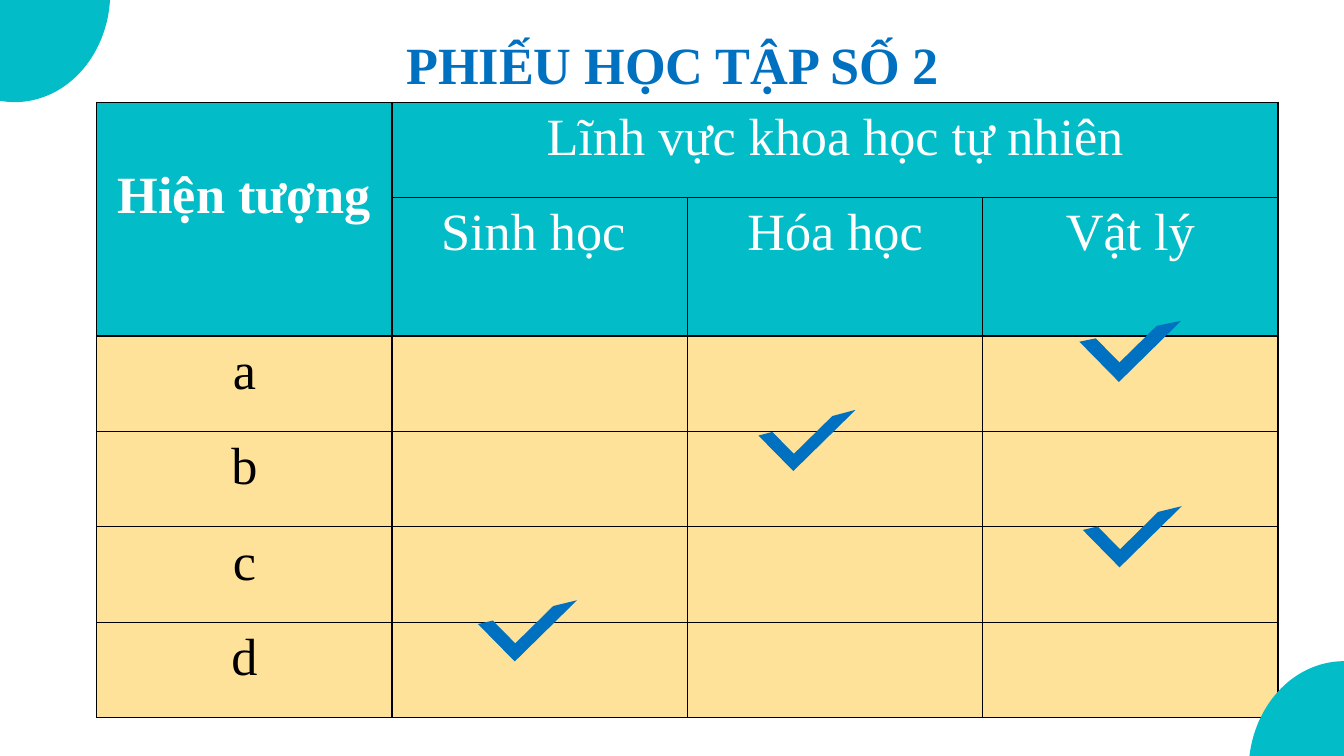
from pptx import Presentation
from pptx.dml.color import RGBColor
from pptx.enum.shapes import MSO_SHAPE as SHAPE
from pptx.enum.text import MSO_ANCHOR, PP_ALIGN
from pptx.oxml import parse_xml
from pptx.oxml.ns import nsdecls
from pptx.util import Inches, Pt

# Content
TITLE = "PHIẾU HỌC TẬP SỐ 2"
ROWS = [
    ["Hiện tượng", "Lĩnh vực khoa học tự nhiên", "", ""],
    ["", "Sinh học ", "Hóa học", "Vật lý"],
    ["a", "", "", ""],
    ["b", "", "", ""],
    ["c", "", "", ""],
    ["d", "", "", ""],
]
HEADER_ROWS = 2
ROW_HEIGHTS = [0.71, 1.03, 0.71, 0.71, 0.71, 0.71]
TICKS = [  # left, top, width
    (8.2, 2.14, 0.42),
    (8.23, 3.53, 0.39),
    (5.82, 2.82, 0.37),
    (3.73, 4.23, 0.39),
]
CORNERS = [(-0.6, -0.87), (9.29, 4.92)]
FONT, SIZE = "Times New Roman", 28
BLUE, TEAL, CREAM = "0070C0", "02BDC7", "FFE299"
WHITE, BLACK = "FFFFFF", "000000"


def rgb(hex_color):
    return RGBColor.from_string(hex_color)


def style(p, color, bold=False):
    p.alignment = PP_ALIGN.CENTER
    p.font.name, p.font.size, p.font.bold = FONT, Pt(SIZE), bold
    p.font.color.rgb = rgb(color)


def add_plain(s, kind, x, y, w, h, color):
    sp = s.shapes.add_shape(kind, Inches(x), Inches(y), Inches(w), Inches(h))
    sp.shadow.inherit = False
    sp.fill.solid()
    sp.fill.fore_color.rgb = rgb(color)
    sp.line.fill.background()
    return sp


def set_borders(cell, color, width):
    tc_pr = cell._tc.get_or_add_tcPr()
    for i, side in enumerate(("lnL", "lnR", "lnT", "lnB")):
        tc_pr.insert(i, parse_xml(
            f'<a:{side} {nsdecls("a")} w="{Pt(width)}"><a:solidFill>'
            f'<a:srgbClr val="{color}"/></a:solidFill></a:{side}>'))


# Widescreen 16:9 slide
prs = Presentation()
prs.slide_width = Inches(10)
prs.slide_height = prs.slide_width * 9 // 16
s = prs.slides.add_slide(prs.slide_layouts[5])

# Title
title = s.shapes.title
title.left, title.top = Inches(1.6), Inches(0.19)
title.width, title.height = Inches(6.81), Inches(0.57)
title.text_frame.text = TITLE
style(title.text_frame.paragraphs[0], BLUE, bold=True)

# Table
table = s.shapes.add_table(len(ROWS), len(ROWS[0]), Inches(0.72), Inches(0.76),
                           Inches(8.79), Inches(sum(ROW_HEIGHTS))).table
for row, height in zip(table.rows, ROW_HEIGHTS):
    row.height = Inches(height)
for r, texts in enumerate(ROWS):
    header = r < HEADER_ROWS
    for c, text in enumerate(texts):
        cell = table.cell(r, c)
        cell.fill.solid()
        cell.fill.fore_color.rgb = rgb(TEAL if header else CREAM)
        set_borders(cell, BLACK, 0.75)
        cell.vertical_anchor = MSO_ANCHOR.TOP
        if text:
            cell.text = text
            style(cell.text_frame.paragraphs[0], WHITE if header else BLACK,
                  bold=(r, c) == (0, 0))
table.cell(0, 0).merge(table.cell(1, 0))
table.cell(0, 1).merge(table.cell(0, 3))
table.cell(0, 0).margin_top = Inches(0.48)

# Tick marks: half frames turned upside down
for x, y, w in TICKS:
    tick = add_plain(s, SHAPE.HALF_FRAME, x, y, w, 0.65, BLUE)
    tick.rotation = 225.5
    tick.adjustments[0], tick.adjustments[1] = 0.25, 0.24

# Corner circles
for x, y in CORNERS:
    add_plain(s, SHAPE.OVAL, x, y, 1.42, 1.63, TEAL)

prs.save("out.pptx")
